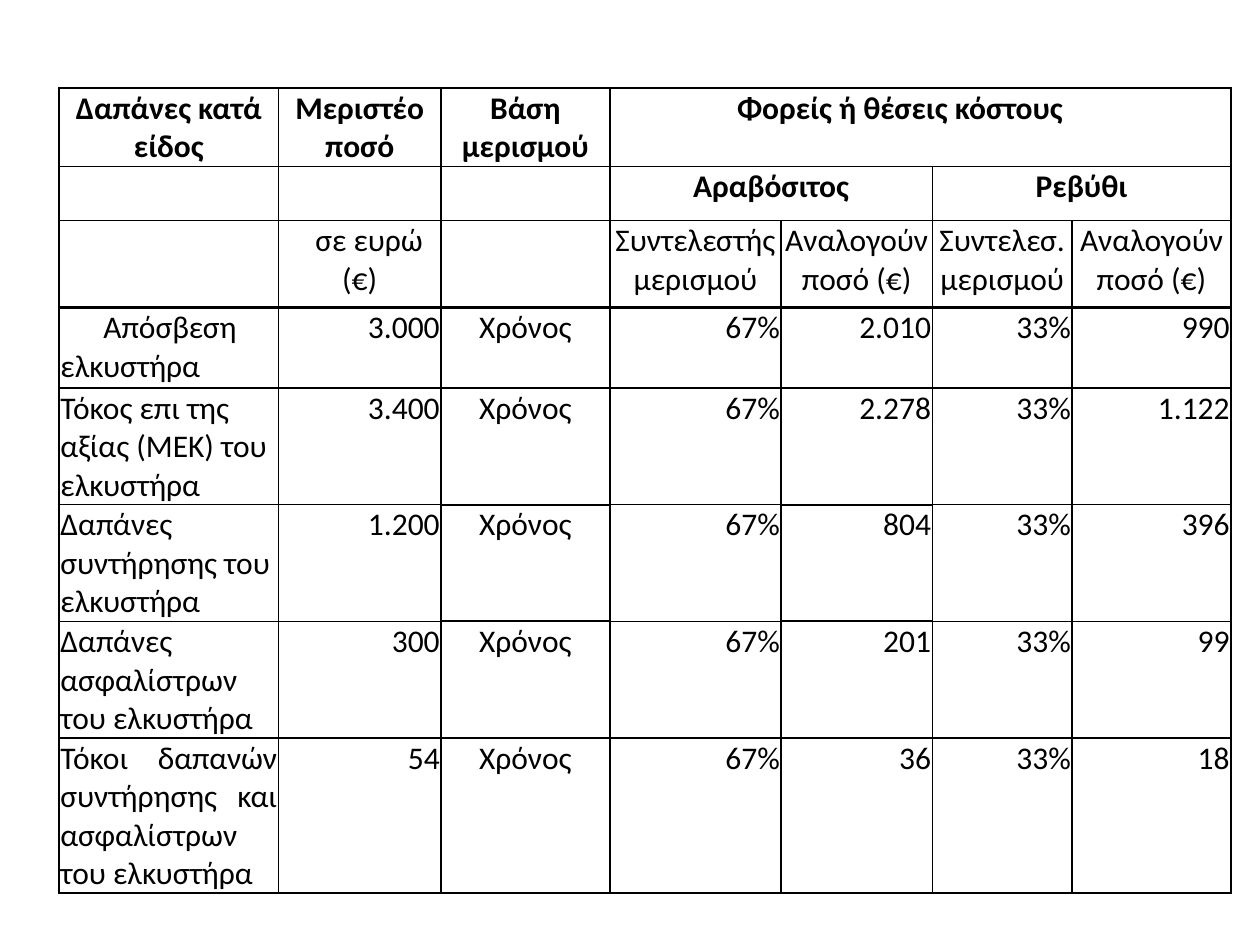
"""Build a slide with a table allocating tractor costs to two crops."""
from dataclasses import dataclass

from lxml.etree import SubElement
from pptx import Presentation
from pptx.dml.color import RGBColor
from pptx.enum.text import PP_ALIGN
from pptx.oxml.ns import qn
from pptx.table import Table, _Cell
from pptx.util import Inches, Pt


@dataclass(frozen=True)
class Theme:
    font: str = "Calibri"
    size: float = 18
    ink: str = "000000"
    thin: float = 1
    thick: float = 1.5
    margin: float = 0.01


@dataclass(frozen=True)
class Entry:
    text: str
    align: PP_ALIGN = PP_ALIGN.CENTER
    bold: bool = False
    indent: float = 0
    span: int = 1


@dataclass(frozen=True)
class Cost:
    label: Entry
    amounts: tuple[str, str, str]


THEME = Theme()
LEFT, RIGHT, JUSTIFY = PP_ALIGN.LEFT, PP_ALIGN.RIGHT, PP_ALIGN.JUSTIFY
COLS = (1.74, 1.29, 1.34, 1.36, 1.2, 1.11, 1.26)
ROWS = (0.56, 0.43, 0.69, 0.64, 0.64, 0.63, 0.88, 1.16)
FIRST_COST = 3
RULED_COLS = (2, 4)
BASIS, CORN_SHARE, CHICKPEA_SHARE = "Χρόνος", "67%", "33%"

HEADERS = (
    {
        0: Entry("Δαπάνες κατά είδος", bold=True),
        1: Entry("Μεριστέο ποσό", bold=True),
        2: Entry("Βάση μερισμού", bold=True),
        3: Entry("Φορείς ή θέσεις κόστους", LEFT, True, 1, 4),
    },
    {
        3: Entry("Αραβόσιτος", bold=True, span=2),
        5: Entry("Ρεβύθι", bold=True, span=2),
    },
    {
        1: Entry("σε ευρώ (€)", indent=0.15),
        3: Entry("Συντελεστής μερισμού"),
        4: Entry("Αναλογούν ποσό (€)"),
        5: Entry("Συντελεσ. μερισμού"),
        6: Entry("Αναλογούν ποσό (€)"),
    },
)

COSTS = (
    Cost(Entry("Απόσβεση ελκυστήρα", LEFT, indent=0.34), ("3.000", "2.010", "990")),
    Cost(Entry("Τόκος επι της αξίας (ΜΕΚ) του ελκυστήρα", LEFT), ("3.400", "2.278", "1.122")),
    Cost(Entry("Δαπάνες συντήρησης του ελκυστήρα", LEFT), ("1.200", "804", "396")),
    Cost(Entry("Δαπάνες ασφαλίστρων του ελκυστήρα", LEFT), ("300", "201", "99")),
    Cost(Entry("Τόκοι δαπανών συντήρησης και ασφαλίστρων του ελκυστήρα", JUSTIFY),
         ("54", "36", "18")),
)


def cost_entries(cost: Cost) -> dict[int, Entry]:
    """Return the entries of one cost row by column."""
    total, corn, chickpea = cost.amounts
    figures = (CORN_SHARE, corn, CHICKPEA_SHARE, chickpea)
    return {
        0: cost.label,
        1: Entry(total, RIGHT),
        2: Entry(BASIS),
        **{col: Entry(text, RIGHT) for col, text in enumerate(figures, 3)},
    }


def rule_width(line: int, col: int) -> float:
    """Return the width of the horizontal rule above the given row."""
    inner = FIRST_COST < line < len(ROWS) and col in RULED_COLS
    return THEME.thick if line == FIRST_COST or inner else THEME.thin


def side_width(row: int, edge: bool) -> float:
    """Return the width of a vertical rule, heavier around the first cost."""
    return THEME.thick if row == FIRST_COST and edge else THEME.thin


def style_cell(cell: _Cell, row: int, col: int) -> None:
    """Clear the fill and set the margins and borders of a cell."""
    cell.margin_left = cell.margin_right = cell.margin_top = Inches(THEME.margin)
    cell.margin_bottom = 0
    widths = {
        "a:lnL": side_width(row, col == 0),
        "a:lnR": side_width(row, col == len(COLS) - 1),
        "a:lnT": rule_width(row, col),
        "a:lnB": rule_width(row + 1, col),
    }
    tc_pr = cell._tc.get_or_add_tcPr()
    for tag, width in widths.items():
        ln = SubElement(tc_pr, qn(tag), w=str(Pt(width)))
        fill = SubElement(ln, qn("a:solidFill"))
        SubElement(fill, qn("a:srgbClr"), val=THEME.ink)
    cell.fill.background()


def write_entry(table: Table, row: int, col: int, entry: Entry) -> None:
    """Write an entry, merging the cells that it spans."""
    cell = table.cell(row, col)
    if entry.span > 1:
        cell.merge(table.cell(row, col + entry.span - 1))
    p = cell.text_frame.paragraphs[0]
    p.text = entry.text
    p.alignment = entry.align
    if entry.indent:
        p_pr = p._p.get_or_add_pPr()
        p_pr.set("marL", "0")
        p_pr.set("indent", str(Inches(entry.indent)))
    font = p.runs[0].font
    font.name, font.size, font.bold = THEME.font, Pt(THEME.size), entry.bold
    font.color.rgb = RGBColor.from_string(THEME.ink)


def main() -> None:
    """Create the presentation and save it."""
    prs = Presentation()
    prs.slide_width, prs.slide_height = Inches(10), Inches(7.5)
    s = prs.slides.add_slide(prs.slide_layouts[6])
    table = s.shapes.add_table(
        len(ROWS), len(COLS), Inches(0.47), Inches(0.7), Inches(9.3), Inches(6.29)
    ).table
    table.first_row = table.horz_banding = False
    for column, width in zip(table.columns, COLS):
        column.width = Inches(width)
    for table_row, height in zip(table.rows, ROWS):
        table_row.height = Inches(height)

    entries = (*HEADERS, *map(cost_entries, COSTS))
    for row, row_entries in enumerate(entries):
        for col in range(len(COLS)):
            style_cell(table.cell(row, col), row, col)
        for col, entry in row_entries.items():
            write_entry(table, row, col, entry)
    prs.save("out.pptx")


if __name__ == "__main__":
    main()
